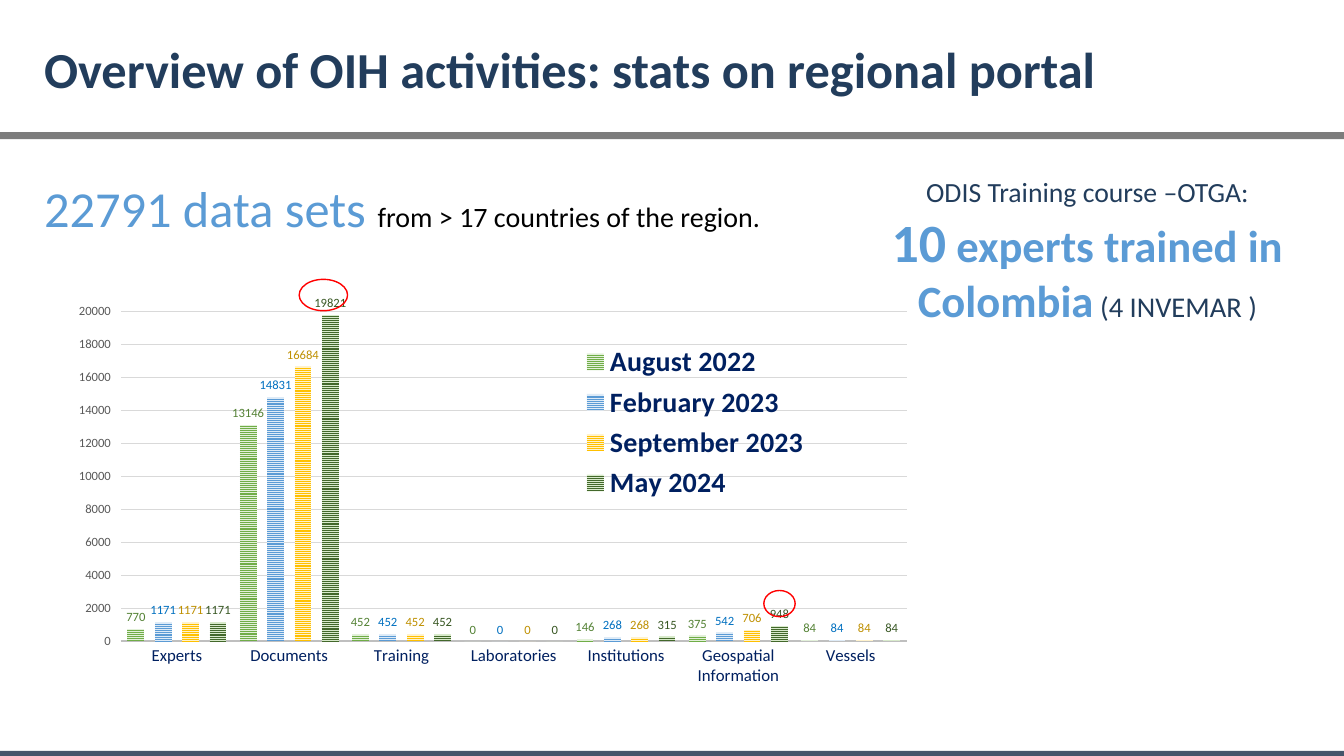
"""Build the slide with regional portal statistics and the training result."""
from dataclasses import dataclass

from lxml.etree import SubElement
from pptx import Presentation
from pptx.chart.data import CategoryChartData
from pptx.dml.color import RGBColor
from pptx.enum.chart import XL_CHART_TYPE, XL_LABEL_POSITION, XL_LEGEND_POSITION, XL_TICK_MARK
from pptx.enum.dml import MSO_PATTERN
from pptx.enum.shapes import MSO_SHAPE
from pptx.enum.text import PP_ALIGN
from pptx.oxml.ns import qn
from pptx.util import Cm, Pt


@dataclass(frozen=True)
class Theme:
    font: str = "Calibri"
    navy: str = "223D5C"
    accent: str = "5B9BD5"
    black: str = "000000"
    header_rule: str = "7C7C7C"
    footer_rule: str = "44546A"
    ring: str = "FF0000"
    chart_text: str = "002060"
    scale_text: str = "595959"
    axis: str = "BFBFBF"
    grid: str = "D9D9D9"
    headline: float = 36
    body: float = 20
    course: float = 19.8
    count: float = 38.5
    trained: float = 31.9
    origin: float = 20.4
    category: float = 12
    scale: float = 9


theme = Theme()


def style(font, size, color, bold=False):
    font.name = theme.font
    font.size = Pt(size)
    font.bold = bold
    font.color.rgb = RGBColor.from_string(color)


def place_text(box, paragraphs, align):
    frame = slide.shapes.add_textbox(*map(Cm, box)).text_frame
    frame.word_wrap = True
    for index, runs in enumerate(paragraphs):
        paragraph = frame.paragraphs[0] if index == 0 else frame.add_paragraph()
        paragraph.alignment = align
        for text, *look in runs:
            run = paragraph.add_run()
            run.text = text
            if len(runs) > 1:
                style(run.font, *look)
        if len(runs) == 1:
            style(paragraph.font, *runs[0][1:])
    return frame


presentation = Presentation()
presentation.slide_width = Cm(33.87)
presentation.slide_height = Cm(19.05)
slide = presentation.slides.add_slide(presentation.slide_layouts[6])

for top, height, color in [(3.33, 0.18, theme.header_rule), (18.92, 0.13, theme.footer_rule)]:
    rule = slide.shapes.add_shape(MSO_SHAPE.RECTANGLE, 0, Cm(top), presentation.slide_width, Cm(height))
    rule.shadow.inherit = False
    rule.fill.solid()
    rule.fill.fore_color.rgb = RGBColor.from_string(color)
    rule.line.fill.background()

headline = place_text(
    (0.86, 1.02, 30.13, 2.44),
    [[("Overview of OIH activities: stats on regional portal", theme.headline, theme.navy, True)]],
    PP_ALIGN.LEFT,
)
headline.paragraphs[0].line_spacing = 0.9

place_text(
    (0.86, 4.34, 20.09, 1.8),
    [[
        ("22791 data sets ", theme.headline, theme.accent),
        ("from > 17 countries of the region.", theme.body, theme.black),
    ]],
    PP_ALIGN.JUSTIFY,
)
place_text(
    (21.79, 4.29, 11.23, 4.75),
    [
        [("ODIS Training course –OTGA:", theme.course, theme.navy)],
        [
            ("10", theme.count, theme.accent, True),
            (" experts trained in Colombia", theme.trained, theme.accent, True),
            (" ", theme.course, theme.accent),
            ("(4 INVEMAR\u00a0)", theme.origin, theme.navy),
        ],
    ],
    PP_ALIGN.CENTER,
)

surveys = [
    ("August 2022", (770, 13146, 452, 0, 146, 375, 84), "70AD47", "E2F0D9", "548235"),
    ("February 2023", (1171, 14831, 452, 0, 268, 542, 84), "5B9BD5", "DEEBF7", "0070C0"),
    ("September 2023", (1171, 16684, 452, 0, 268, 706, 84), "FFC000", "FFF2CC", "BF9000"),
    ("May 2024", (1171, 19821, 452, 0, 315, 948, 84), "43682B", "D8EACB", "385723"),
]
records = CategoryChartData(number_format="General")
records.categories = [
    "Experts", "Documents", "Training", "Laboratories",
    "Institutions", "Geospatial Information", "Vessels",
]
for name, values, *_ in surveys:
    records.add_series(name, values)
chart = slide.shapes.add_chart(
    XL_CHART_TYPE.COLUMN_CLUSTERED, Cm(1.52), Cm(6.15), Cm(21.77), Cm(11.38), records
).chart
chart.has_title = False
style(chart.font, 10, theme.black)

columns = chart.plots[0]
columns.gap_width = 80
columns.overlap = -63
columns.vary_by_categories = False
for series, (_, _, stripe, ground, label_color) in zip(columns.series, surveys):
    fill = series.format.fill
    fill.patterned()
    fill.pattern = MSO_PATTERN.NARROW_HORIZONTAL
    fill.fore_color.rgb = RGBColor.from_string(stripe)
    fill.back_color.rgb = RGBColor.from_string(ground)
    labels = series.data_labels
    labels.show_value = True
    labels.position = XL_LABEL_POSITION.OUTSIDE_END
    style(labels.font, theme.scale, label_color)

topics = chart.category_axis
topics.major_tick_mark = XL_TICK_MARK.NONE
topics.format.line.color.rgb = RGBColor.from_string(theme.axis)
topics.format.line.width = Pt(1.5)
style(topics.tick_labels.font, theme.category, theme.chart_text)

scale = chart.value_axis
scale.minimum_scale = 0
scale.maximum_scale = 20000
scale.major_unit = 2000
scale.format.line.fill.background()
scale.major_gridlines.format.line.color.rgb = RGBColor.from_string(theme.grid)
scale.major_gridlines.format.line.width = Pt(0.75)
style(scale.tick_labels.font, theme.scale, theme.scale_text)

chart.has_legend = True
legend = chart.legend
legend.position = XL_LEGEND_POSITION.TOP
legend.include_in_layout = False
style(legend.font, theme.body, theme.chart_text, True)

plot_area = chart.plots[0]._element.getparent()
for layout, inner, bounds in [
    (plot_area.get_or_add_layout() if hasattr(plot_area, "get_or_add_layout") else plot_area.find(qn("c:layout")),
     True, (0.07, 0.15, 0.91, 0.73)),
    (legend._element.get_or_add_layout(), False, (0.6, 0.21, 0.27, 0.37)),
]:
    if layout is None:
        layout = plot_area.makeelement(qn("c:layout"))
        plot_area.insert(0, layout)
    manual = SubElement(layout, qn("c:manualLayout"))
    if inner:
        SubElement(manual, qn("c:layoutTarget"), val="inner")
    for mode in ("xMode", "yMode"):
        SubElement(manual, qn(f"c:{mode}"), val="edge")
    for side, share in zip("xywh", bounds):
        SubElement(manual, qn(f"c:{side}"), val=str(share))

for bounds in [(7.54, 7.04, 1.22, 0.79), (19.25, 14.88, 0.79, 0.66)]:
    ring = slide.shapes.add_shape(MSO_SHAPE.OVAL, *map(Cm, bounds))
    ring.shadow.inherit = False
    ring.fill.background()
    ring.line.color.rgb = RGBColor.from_string(theme.ring)
    ring.line.width = Pt(1)

presentation.save("out.pptx")
